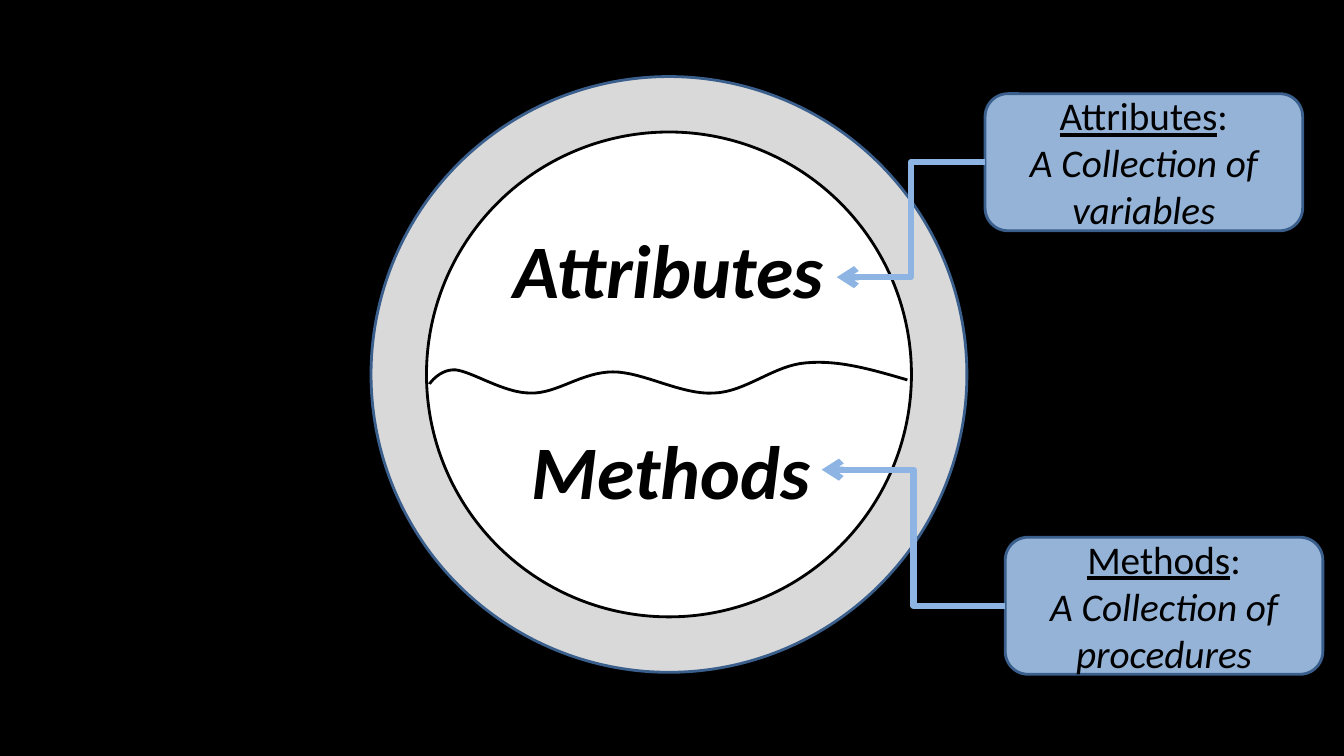
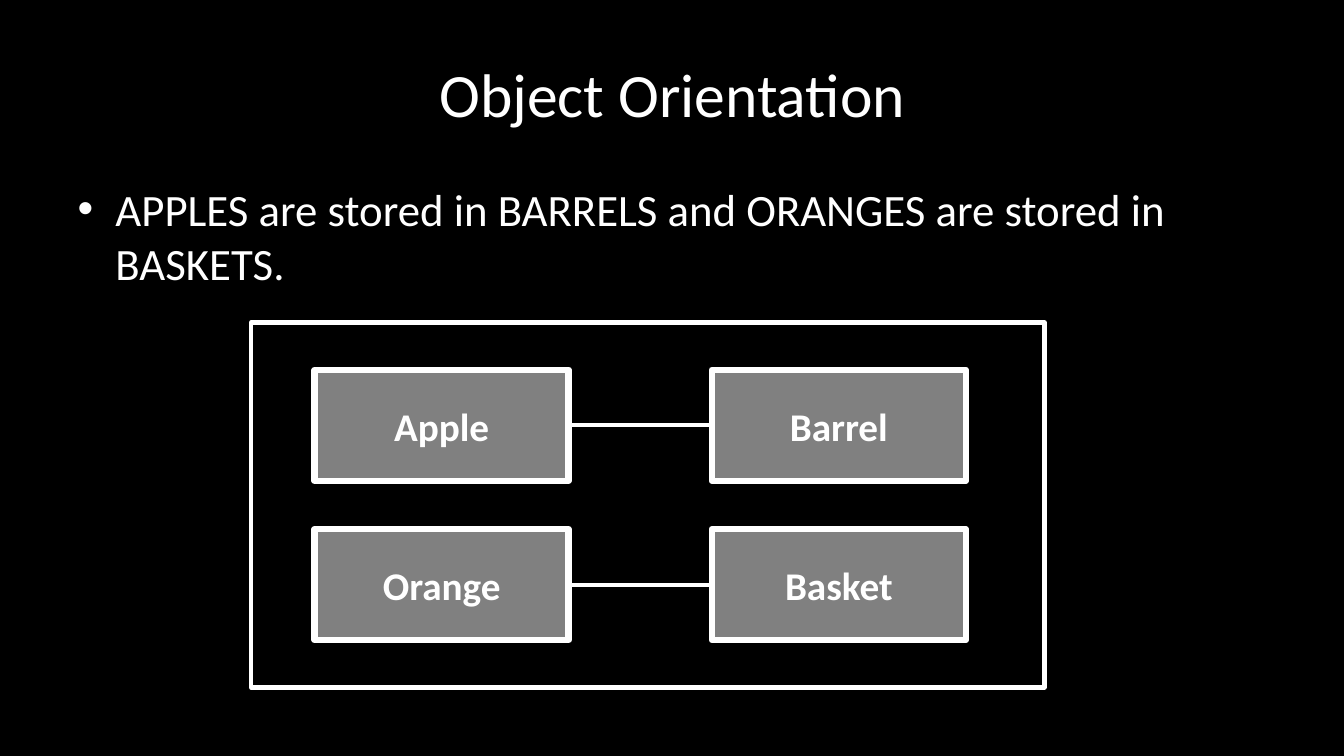
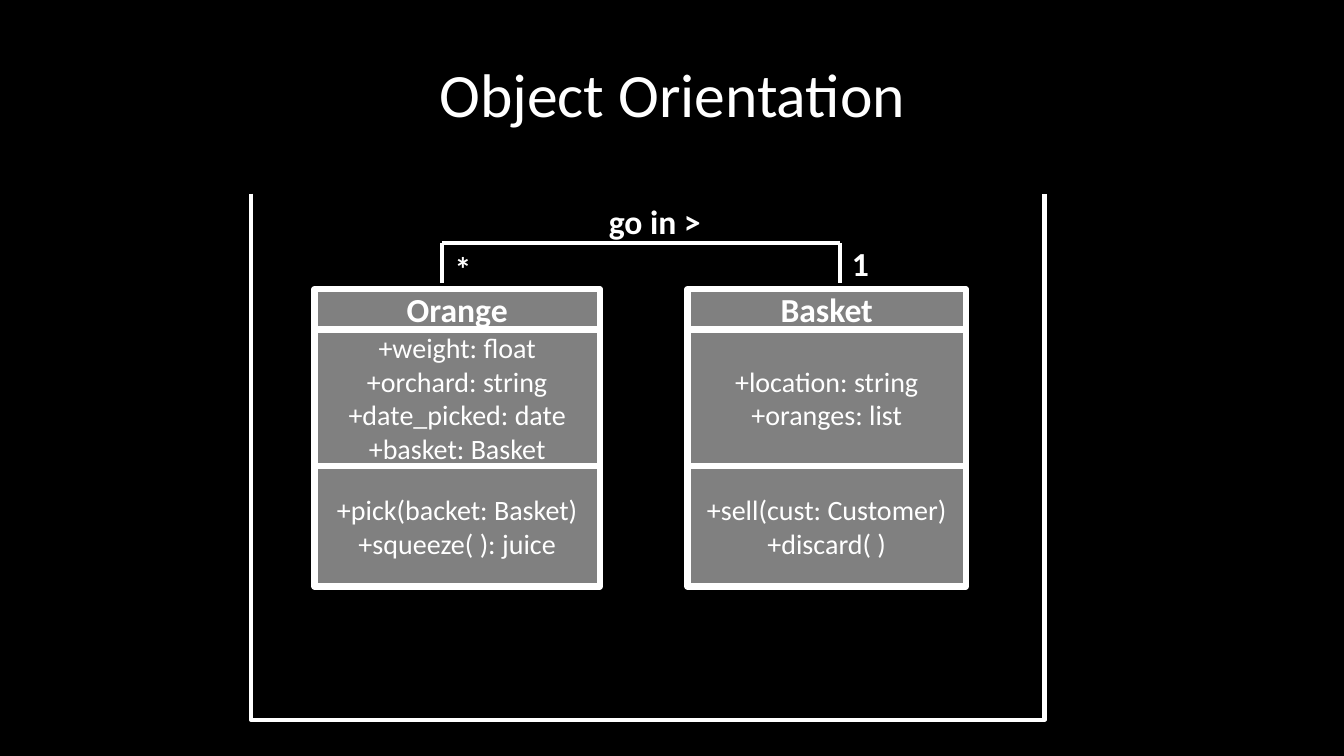
import pptx
import pptx.dml.color
import pptx.enum.shapes
import pptx.enum.text
import pptx.oxml.ns
import pptx.util
from lxml import etree

Inches = pptx.util.Inches
Pt = pptx.util.Pt
SHAPE = pptx.enum.shapes.MSO_SHAPE
CONNECTOR = pptx.enum.shapes.MSO_CONNECTOR
ALIGN = pptx.enum.text.PP_ALIGN
ANCHOR = pptx.enum.text.MSO_ANCHOR
qn = pptx.oxml.ns.qn

FONT = "Calibri"
BLACK, WHITE, GREY, RIM = "000000", "FFFFFF", "808080", "D9D9D9"
CALLOUT, EDGE, ARROW = "95B3D7", "3A5F8C", "8EB4E3"
TITLE_BOX = (0.67, 0.3, 12, 1.25)
BODY_BOX = (0.67, 1.75, 12, 4.95)
LEFT_SITE, RIGHT_SITE = 1, 3


def rgb(hex_colour):
    return pptx.dml.color.RGBColor.from_string(hex_colour)


def inches(*lengths):
    return [Inches(length) for length in lengths]


def place(shape, box):
    shape.left, shape.top, shape.width, shape.height = inches(*box)


def write(frame, lines, size, colour=WHITE, align=None, bold=None):
    for index, runs in enumerate(lines):
        paragraph = frame.paragraphs[0] if index == 0 else frame.add_paragraph()
        paragraph.alignment = align
        if index == 0:
            paragraph.space_before = Pt(0)
        for text, style in runs:
            run = paragraph.add_run()
            run.text = text
            run.font.name = FONT
            run.font.size = Pt(size)
            run.font.color.rgb = rgb(colour)
            run.font.bold = bold
            run.font.italic = "i" in style or None
            run.font.underline = "u" in style or None


def plain(*texts):
    return [[(text, "")] for text in texts]


def outline(shape, colour, width):
    shape.line.color.rgb = rgb(colour)
    shape.line.width = Pt(width)


def add_block(slide, kind, box, fill, edge, width):
    block = slide.shapes.add_shape(kind, *inches(*box))
    block.shadow.inherit = False
    block.fill.solid()
    block.fill.fore_color.rgb = rgb(fill)
    outline(block, edge, width)
    block.text_frame.word_wrap = True
    block.text_frame.vertical_anchor = ANCHOR.MIDDLE
    return block


def add_grey_box(slide, box, lines, size, bold=None):
    block = add_block(slide, SHAPE.RECTANGLE, box, GREY, WHITE, 4.5)
    write(block.text_frame, plain(*lines), size, align=ALIGN.CENTER, bold=bold)
    return block


def add_label(slide, box, text, size, colour=WHITE, style="", align=None):
    label = slide.shapes.add_textbox(*inches(*box))
    label.text_frame.word_wrap = False
    label.text_frame.auto_size = pptx.enum.text.MSO_AUTO_SIZE.SHAPE_TO_FIT_TEXT
    write(label.text_frame, [[(text, style)]], size, colour, align, bold=True)


def add_line(slide, start, end, kind=CONNECTOR.STRAIGHT, colour=WHITE, width=3):
    line = slide.shapes.add_connector(kind, *inches(*start, *end))
    outline(line, colour, width)
    etree.SubElement(line._element.spPr, qn("a:effectLst"))
    return line


def add_outline(slide, points, colour, width, close=False):
    vertices = [inches(*point) for point in points]
    builder = slide.shapes.build_freeform(*vertices[0], scale=1.0)
    builder.add_line_segments(vertices[1:], close=close)
    path_shape = builder.convert_to_shape()
    path_shape.shadow.inherit = False
    path_shape.fill.background()
    outline(path_shape, colour, width)


def bezier(start, curves, steps=16):
    points = [start]
    for a, b, end in curves:
        for step in range(1, steps + 1):
            t = step / steps
            s = 1 - t
            points.append([
                s**3 * p + 3 * s**2 * t * q + 3 * s * t**2 * r + t**3 * e
                for p, q, r, e in zip(start, a, b, end)
            ])
        start = end
    return points


def add_title(slide, text):
    place(slide.shapes.title, TITLE_BOX)
    slide.shapes.title.text_frame.vertical_anchor = ANCHOR.MIDDLE
    write(slide.shapes.title.text_frame, plain(text), 44, align=ALIGN.CENTER)


def add_object_circle(slide, box):
    left, top, size, _ = box
    rim = 0.55
    core = (left + rim, top + rim, size - 2 * rim, size - 2 * rim)
    add_block(slide, SHAPE.OVAL, box, RIM, EDGE, 2)
    add_block(slide, SHAPE.OVAL, core, WHITE, BLACK, 2)
    for text, dx, dy, width in (("Attributes", 1.28, 1.4, 3.34), ("Methods", 1.48, 3.4, 2.99)):
        add_label(slide, (left + dx, top + dy, width, 1.01), text, 54, BLACK, "i", ALIGN.CENTER)
    wave = bezier((5.32, 3.01), [
        ((4.98, 2.91), (4.64, 2.81), (4.32, 2.84)),
        ((4, 2.86), (3.72, 3.13), (3.4, 3.14)),
        ((3.08, 3.16), (2.7, 2.93), (2.4, 2.93)),
        ((2.09, 2.93), (1.84, 3.15), (1.58, 3.14)),
        ((1.32, 3.14), (1.01, 2.93), (0.84, 2.91)),
        ((0.68, 2.9), (0.58, 3.05), (0.58, 3.05)),
    ])
    add_outline(slide, [(left + x, top + y) for x, y in wave], BLACK, 2)


def add_callout(slide, box, heading, meaning, target):
    left, top, _, height = box
    callout = add_block(slide, SHAPE.ROUNDED_RECTANGLE, box, CALLOUT, EDGE, 2)
    lines = [[(heading, "u"), (":", "")], [(meaning, "i")]]
    write(callout.text_frame, lines, 28, BLACK, ALIGN.CENTER)
    arrow = add_line(slide, (left, top + height / 2), target, CONNECTOR.ELBOW, ARROW, 4.5)
    arrow.begin_connect(callout, LEFT_SITE)
    etree.SubElement(arrow.line._get_or_add_ln(), qn("a:tailEnd"), type="arrow")


def add_storage_diagram(slide, box):
    left, top, width, height = box
    frame = add_block(slide, SHAPE.RECTANGLE, box, BLACK, WHITE, 3)
    frame.fill.background()
    for row, names in enumerate((("Apple", "Barrel"), ("Orange", "Basket"))):
        fruit, container = [
            add_grey_box(
                slide,
                (left + 0.63 + column * 3.94, top + 0.47 + row * 1.58, 2.52, 1.1),
                [name], 28, bold=True,
            )
            for column, name in enumerate(names)
        ]
        link = add_line(slide, (0, 0), (1, 1))
        link.begin_connect(container, LEFT_SITE)
        link.end_connect(fruit, RIGHT_SITE)


def add_class(slide, left, top, width, name, attributes, methods):
    sections = ((0.4, [name], 24, True), (1.35, attributes, 20, None), (1.2, methods, 20, None))
    for height, lines, size, bold in sections:
        add_grey_box(slide, (left, top, width, height), lines, size, bold)
        top += height


def add_association(slide, box):
    left, top, width, height = box
    right, bottom = left + width, top + height
    add_line(slide, (right, top), (left, top))
    for x in (left, right):
        add_line(slide, (x, top), (x, bottom))
    add_label(slide, (left + 0.03, top, 0.42, 0.5), "*", 24)
    add_label(slide, (right + 0.02, top - 0.05, 0.37, 0.5), "1", 24)
    add_label(slide, (left + 1.56, top - 0.47, 1.12, 0.5), "go in >", 24)


def add_class_diagram(slide, box):
    left, top, width, height = box
    right, bottom = left + width, top + height
    add_outline(slide, [(left, top), (left, bottom), (right, bottom), (right, top)], WHITE, 3)
    add_class(
        slide, left + 0.63, top + 0.95, 2.83, "Orange",
        ["+weight: float", "+orchard: string", "+date_picked: date", "+basket: Basket"],
        ["+pick(backet: Basket)", "+squeeze( ): juice"],
    )
    add_class(
        slide, left + 4.33, top + 0.95, 2.76, "Basket",
        ["+location: string", "+oranges: list"],
        ["+sell(cust: Customer)", "+discard( )"],
    )
    add_association(slide, (left + 1.89, top + 0.49, 3.95, 0.4))


def build_object_slide(deck):
    slide = deck.slides.add_slide(deck.slide_layouts[6])
    add_object_circle(slide, (3.68, 0.76, 5.91, 5.91))
    add_callout(slide, (9.77, 0.93, 3.15, 1.36), "Attributes",
                "A Collection of variables", (8.3, 2.75))
    add_callout(slide, (9.97, 5.33, 3.15, 1.36), "Methods",
                "A Collection of procedures", (8.15, 4.66))


def build_storage_slide(deck):
    slide = deck.slides.add_slide(deck.slide_layouts[1])
    add_title(slide, "Object Orientation")
    statement = slide.placeholders[1]
    place(statement, BODY_BOX)
    write(statement.text_frame, plain(
        "APPLES are stored in BARRELS and ORANGES are stored in BASKETS."), 32)
    add_storage_diagram(slide, (2.49, 3.2, 7.87, 3.62))


def build_class_slide(deck):
    slide = deck.slides.add_slide(deck.slide_layouts[5])
    add_title(slide, "Object Orientation")
    add_class_diagram(slide, (2.49, 1.92, 7.87, 5.22))


def main():
    deck = pptx.Presentation()
    deck.slide_width, deck.slide_height = inches(13.33, 7.5)
    master = deck.slide_master
    master.background.fill.solid()
    master.background.fill.fore_color.rgb = rgb(BLACK)
    colour_map = master.element.find(qn("p:clrMap"))
    colour_map.set("bg1", "dk1")
    colour_map.set("tx1", "lt1")
    build_object_slide(deck)
    build_storage_slide(deck)
    build_class_slide(deck)
    deck.save("out.pptx")


if __name__ == "__main__":
    main()
